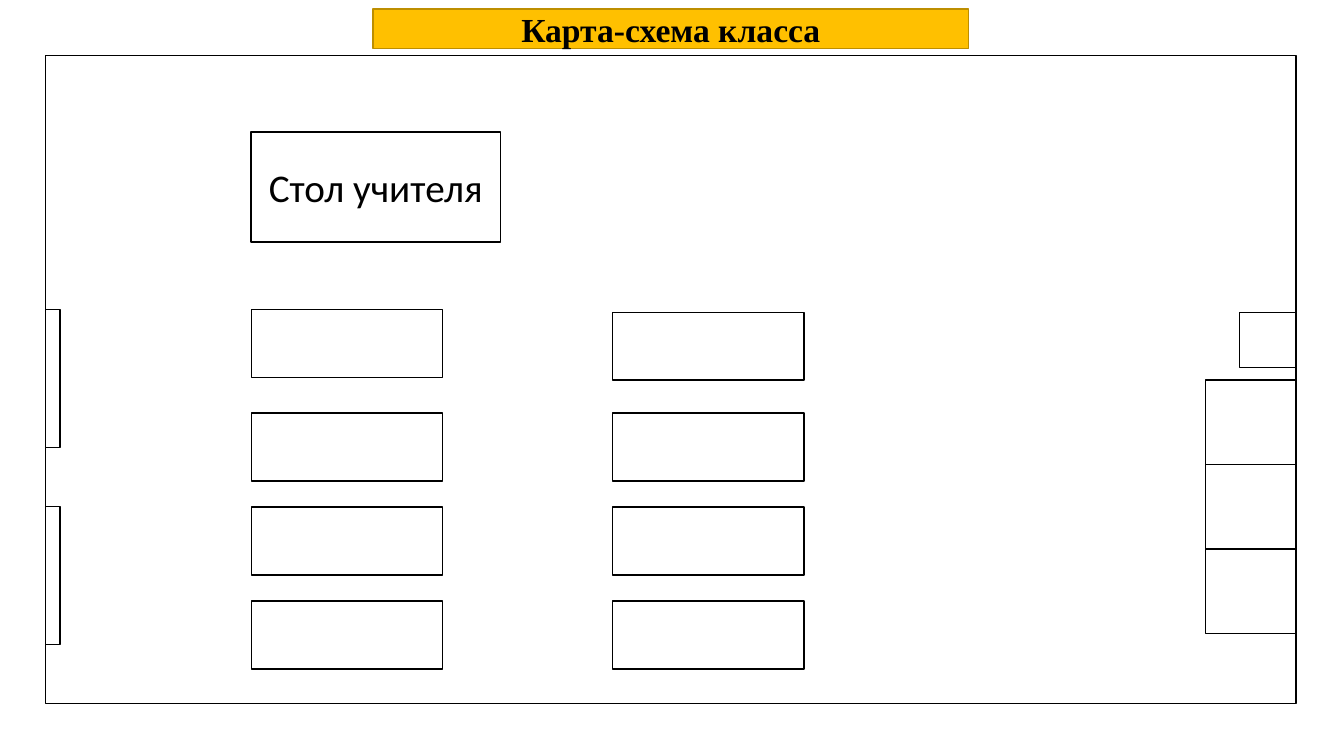
from pptx import Presentation
from pptx.dml.color import RGBColor
from pptx.enum.shapes import MSO_SHAPE
from pptx.enum.text import MSO_ANCHOR, MSO_AUTO_SIZE, PP_ALIGN
from pptx.util import Cm, Pt

RECT = MSO_SHAPE.RECTANGLE
MIDDLE = MSO_ANCHOR.MIDDLE
CENTER = PP_ALIGN.CENTER
NO_FIT = MSO_AUTO_SIZE.NONE
TITLE_ONLY = 5


def rgb(value):
    return RGBColor.from_string(value)


class ClassroomPlan:
    ink = "000000"
    paper = "FFFFFF"
    title_fill = "FFC000"
    title_line = "BD8E00"
    body_font = "Calibri"
    title_font = "Times New Roman"

    def __init__(self, prs):
        self.slide = prs.slides.add_slide(prs.slide_layouts[TITLE_ONLY])
        bg = self.slide.background.fill
        bg.solid()
        bg.fore_color.rgb = rgb(self.paper)

    def paint(self, sp, fill, line):
        sp.fill.solid()
        sp.fill.fore_color.rgb = rgb(fill)
        sp.line.color.rgb = rgb(line)
        sp.line.width = Pt(1)

    def label(self, sp, text, font, size, bold=False):
        tf = sp.text_frame
        tf.text = text
        tf.word_wrap = True
        tf.auto_size = NO_FIT
        tf.vertical_anchor = MIDDLE
        p = tf.paragraphs[0]
        p.alignment = CENTER
        r = p.runs[0]
        r.font.name = font
        r.font.size = Pt(size)
        r.font.bold = bold
        r.font.color.rgb = rgb(self.ink)

    def title(self, text, x, y, w, h):
        sp = self.slide.shapes.title
        sp.left, sp.top, sp.width, sp.height = Cm(x), Cm(y), Cm(w), Cm(h)
        self.paint(sp, self.title_fill, self.title_line)
        self.label(sp, text, self.title_font, 24, bold=True)

    def box(self, x, y, w, h, text=None):
        sp = self.slide.shapes.add_shape(RECT, Cm(x), Cm(y), Cm(w), Cm(h))
        sp.shadow.inherit = False
        self.paint(sp, self.paper, self.ink)
        if text:
            self.label(sp, text, self.body_font, 28)


def main():
    prs = Presentation()
    prs.slide_width, prs.slide_height = Cm(33.87), Cm(19.05)
    plan = ClassroomPlan(prs)
    plan.title("Карта-схема класса", 9.4, 0.23, 15.01, 0.99)

    # Room and teacher's desk
    plan.box(1.14, 1.4, 31.52, 16.33)
    plan.box(6.33, 3.33, 6.28, 2.77, "Стол учителя")

    # Pupils' desks: two columns, the front row slightly staggered
    back_rows = [10.41 + 2.37 * i for i in range(3)]
    for x, front_row in ((6.34, 7.8), (15.44, 7.87)):
        for y in [front_row] + back_rows:
            plan.box(x, y, 4.82, 1.71)

    # Cabinets along the right wall
    plan.box(31.24, 7.87, 1.42, 1.4)
    for i in range(3):
        plan.box(30.38, 9.58 + 2.13 * i, 2.28, 2.13)

    # Openings in the left wall
    for y in (7.8, 12.76):
        plan.box(1.15, y, 0.36, 3.48)

    prs.save("out.pptx")


if __name__ == "__main__":
    main()
